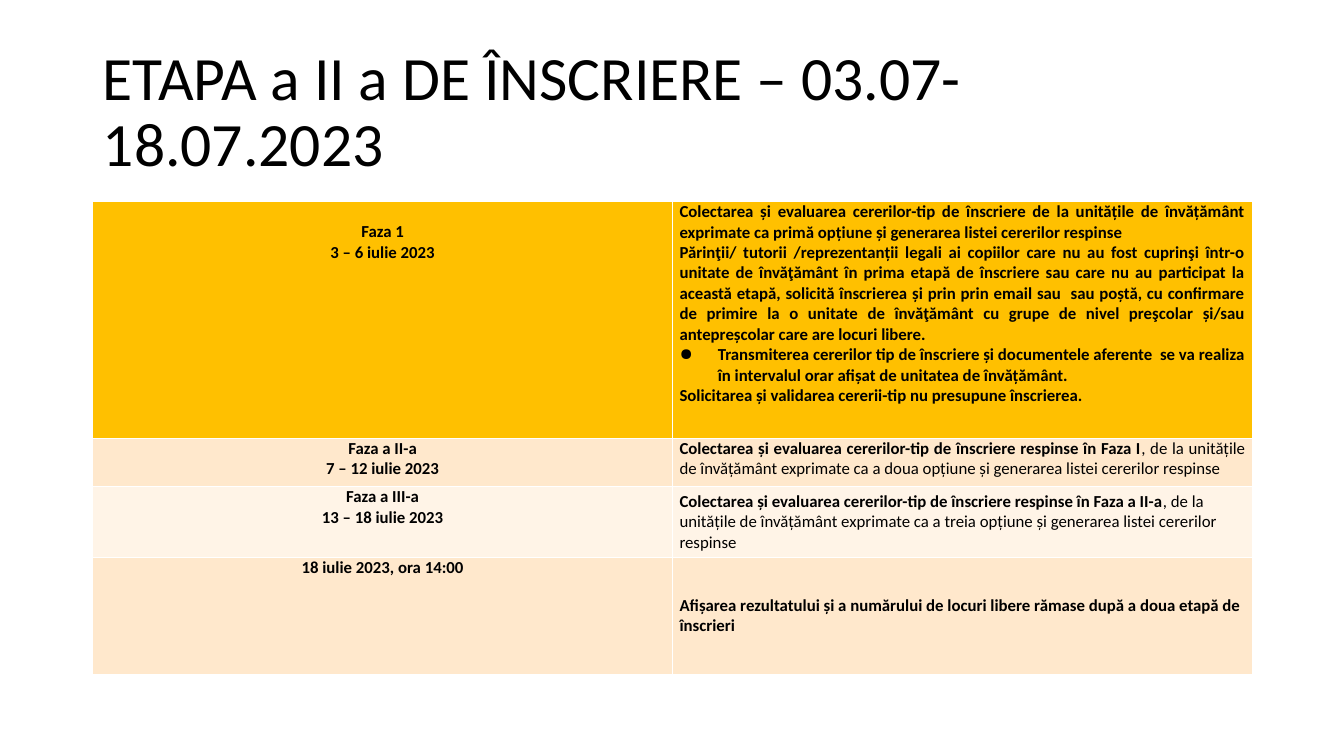
from lxml.etree import SubElement
from pptx import Presentation
from pptx.dml.color import RGBColor
from pptx.enum.text import MSO_ANCHOR, PP_ALIGN
from pptx.oxml.ns import qn
from pptx.util import Inches, Pt

MID, JUST, LEFT = PP_ALIGN.CENTER, PP_ALIGN.JUSTIFY, PP_ALIGN.LEFT
TOP, HALF = MSO_ANCHOR.TOP, MSO_ANCHOR.MIDDLE


def tint(code):
    return RGBColor.from_string(code)


def add_run(para, text, size, bold):
    run = para.add_run()
    run.text = text
    font = run.font
    font.name, font.size, font.bold = "Calibri", Pt(size), bold
    font.color.rgb = tint("000000")


# Slide
deck = Presentation()
deck.slide_width, deck.slide_height = Inches(13.33), Inches(7.5)
slide = deck.slides.add_slide(deck.slide_layouts[5])
left, width = Inches(0.92), Inches(11.5)

# Title
title = slide.shapes.title
title.left, title.top = left, Inches(0.4)
title.width, title.height = width, Inches(1.45)
frame = title.text_frame
frame.vertical_anchor = HALF
frame.word_wrap = True
head = frame.paragraphs[0]
head.alignment, head.line_spacing = LEFT, 0.9
add_run(head, "ETAPA a II a DE ÎNSCRIERE – 03.07-18.07.2023", 44, False)

# Phases: height, fill, dates, then alignment, anchor and text of the right cell
# Each right-hand paragraph is a bold part and a plain part
phases = [
    (2.35, "FFC000", ["Faza 1", "3 – 6 iulie 2023"], JUST, TOP, [
        ("Colectarea și evaluarea cererilor-tip de înscriere de la unitățile "
         "de învățământ exprimate ca primă opțiune și generarea listei "
         "cererilor respinse", ""),
        ("Părinţii/ tutorii /reprezentanții legali ai copiilor care nu au fost "
         "cuprinşi într-o unitate de învăţământ în prima etapă de înscriere "
         "sau care nu au participat la această etapă, solicită înscrierea și "
         "prin prin email sau  sau poștă, cu confirmare de primire la o "
         "unitate de învăţământ cu grupe de nivel preşcolar și/sau "
         "antepreșcolar care are locuri libere.", ""),
        ("Transmiterea cererilor tip de înscriere și documentele aferente  se "
         "va realiza în intervalul orar afișat de unitatea de învățământ.", ""),
        ("Solicitarea și validarea cererii-tip nu presupune înscrierea.", ""),
    ]),
    (0.48, "FFE8CC", ["Faza a II-a", "7 – 12 iulie 2023"], JUST, TOP, [
        ("Colectarea și evaluarea cererilor-tip de înscriere respinse în Faza I",
         ", de la unitățile de învățământ exprimate ca a doua opțiune și "
         "generarea listei cererilor respinse"),
    ]),
    (0.7, "FFF4E7", ["Faza a III-a", "13 – 18 iulie 2023"], LEFT, HALF, [
        ("Colectarea și evaluarea cererilor-tip de înscriere respinse în Faza a II-a",
         ", de la unitățile de învățământ exprimate ca a treia opțiune și "
         "generarea listei cererilor respinse"),
    ]),
    (1.16, "FFE8CC", ["18 iulie 2023, ora 14:00"], LEFT, HALF, [
        ("Afișarea rezultatului și a numărului de locuri libere rămase după a "
         "doua etapă de înscrieri", ""),
    ]),
]

# Table
tall = Inches(sum(phase[0] for phase in phases))
table = slide.shapes.add_table(len(phases), 2, left, Inches(2), width, tall).table
for row, (high, fill, dates, align, anchor, texts) in enumerate(phases):
    table.rows[row].height = Inches(high)
    sides = [(MID, TOP, [(date, "") for date in dates]), (align, anchor, texts)]
    for col, (side, hold, parts) in enumerate(sides):
        cell = table.cell(row, col)
        cell.fill.solid()
        cell.fill.fore_color.rgb = tint(fill)
        cell.vertical_anchor = hold
        cell.margin_left = cell.margin_right = Inches(0.07)
        cell.margin_top = cell.margin_bottom = 0
        for num, (strong, plain) in enumerate(parts):
            body = cell.text_frame
            para = body.paragraphs[0] if num == 0 else body.add_paragraph()
            para.alignment = side
            add_run(para, strong, 12, True)
            if plain:
                add_run(para, plain, 12, False)

# First phase: dates one line lower, third paragraph bulleted
table.cell(0, 0).margin_top = Inches(0.2)
props = table.cell(0, 1).text_frame.paragraphs[2]._p.get_or_add_pPr()
props.set("marL", str(Inches(0.38)))
props.set("indent", str(-Inches(0.38)))
SubElement(props, qn("a:buChar")).set("char", "●")

deck.save("out.pptx")
